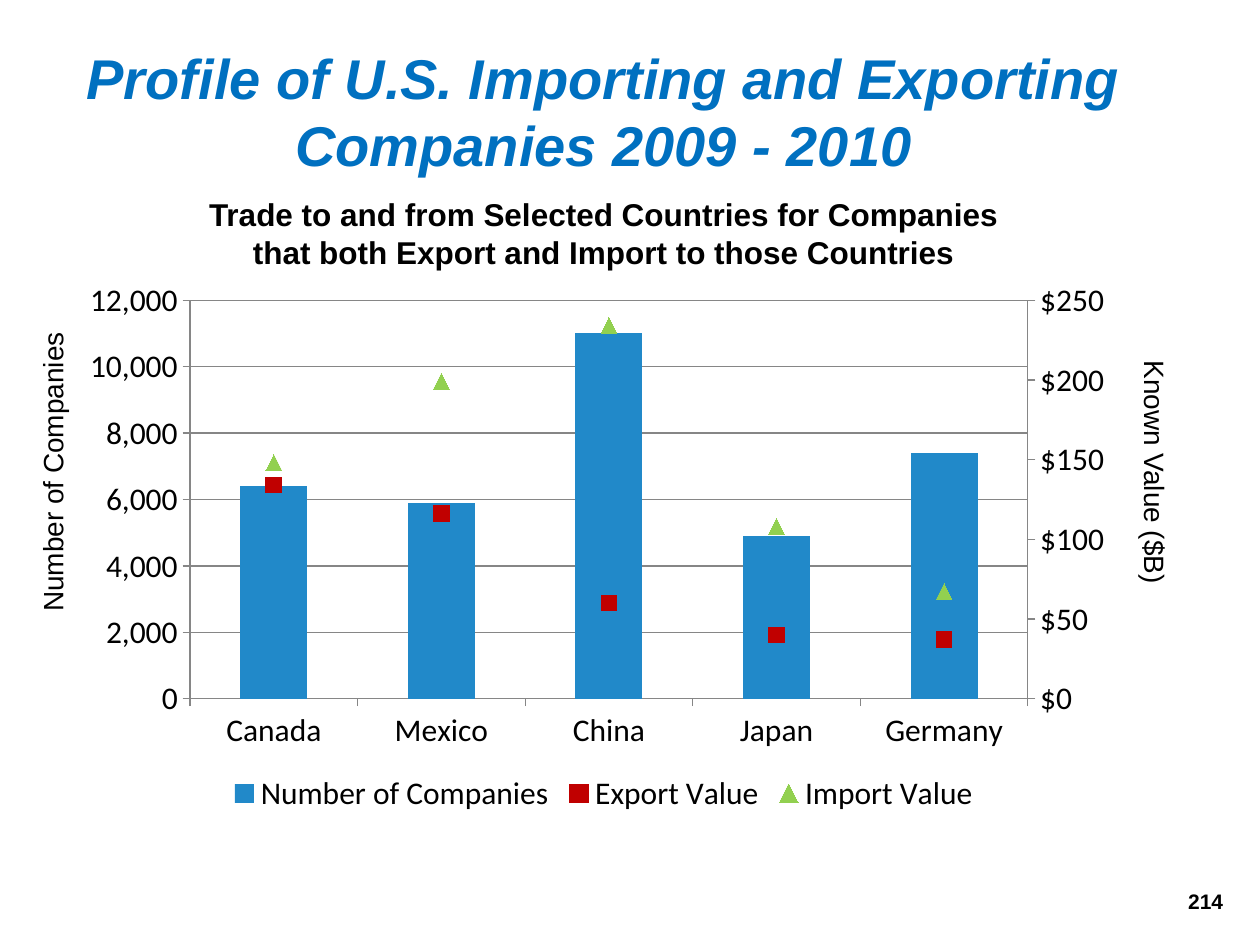
from dataclasses import dataclass

from lxml.etree import SubElement
from pptx import Presentation
from pptx.chart.chart import Chart
from pptx.chart.data import CategoryChartData
from pptx.dml.color import RGBColor
from pptx.enum.chart import XL_CHART_TYPE, XL_LEGEND_POSITION, XL_MARKER_STYLE, XL_TICK_MARK
from pptx.enum.text import MSO_ANCHOR, PP_ALIGN
from pptx.oxml import parse_xml
from pptx.oxml.ns import nsdecls, qn
from pptx.slide import Slide
from pptx.text.text import TextFrame
from pptx.util import Pt


@dataclass(frozen=True)
class Theme:
    text_font: str = "Arial"
    chart_font: str = "Calibri"
    black: str = "000000"
    title_blue: str = "0070C0"
    bar_blue: str = "2189C9"
    export_red: str = "C00000"
    import_green: str = "92D050"
    grid_gray: str = "868686"
    title_size: int = 32
    body_size: int = 18
    axis_title_size: int = 16
    number_size: int = 12


THEME = Theme()


@dataclass(frozen=True)
class Label:
    text: str
    left: float
    top: float
    width: float
    height: float
    size: int
    color: str = THEME.black
    bold: bool = False
    italic: bool = False
    align: PP_ALIGN = PP_ALIGN.CENTER
    anchor: MSO_ANCHOR = MSO_ANCHOR.TOP
    rotation: float = 0


@dataclass(frozen=True)
class ValueSeries:
    name: str
    values: tuple[int, ...]
    marker: XL_MARKER_STYLE
    color: str


TITLE = Label("Profile of U.S. Importing and Exporting Companies 2009 - 2010",
              42, 18, 606, 90, THEME.title_size, THEME.title_blue, True, True,
              anchor=MSO_ANCHOR.MIDDLE)
LABELS = (
    Label("214", 538, 500.5, 168, 28.5, THEME.number_size, bold=True,
          align=PP_ALIGN.RIGHT, anchor=MSO_ANCHOR.MIDDLE),
    Label("Trade to and from Selected Countries for Companies that both Export "
          "and Import to those Countries", 108, 108, 474, 51, THEME.body_size, bold=True),
    Label("Known Value ($B)", 558, 256.5, 204, 26.6, THEME.axis_title_size, rotation=90),
    Label("Number of Companies", -72, 256.5, 204, 26.6, THEME.axis_title_size, rotation=270),
)
COUNTRIES = ("Canada", "Mexico", "China", "Japan", "Germany")
COMPANIES = (6400, 5900, 11000, 4900, 7400)
TRADE_VALUES = (
    ValueSeries("Export Value", (134, 116, 60, 40, 37), XL_MARKER_STYLE.SQUARE, THEME.export_red),
    ValueSeries("Import Value", (148, 199, 234, 108, 67), XL_MARKER_STYLE.TRIANGLE, THEME.import_green),
)
CATEGORY_AXIS_ID, VALUE_AXIS_ID = "50010", "50020"


def write_label(frame: TextFrame, label: Label) -> None:
    frame.word_wrap = True
    frame.vertical_anchor = label.anchor
    para = frame.paragraphs[0]
    para.alignment = label.align
    span = para.add_run()
    span.text = label.text
    span.font.name = THEME.text_font
    span.font.size = Pt(label.size)
    span.font.bold = label.bold
    span.font.italic = label.italic
    span.font.color.rgb = RGBColor.from_string(label.color)


def add_label(page: Slide, label: Label) -> None:
    box = page.shapes.add_textbox(Pt(label.left), Pt(label.top), Pt(label.width), Pt(label.height))
    box.rotation = label.rotation
    write_label(box.text_frame, label)


def set_plot_area(chart: Chart, left: float, top: float, width: float, height: float) -> None:
    """Fix the inner plot area, as fractions of the chart."""
    plot_area = chart._chartSpace.chart.plotArea
    for old in plot_area.findall(qn("c:layout")):
        plot_area.remove(old)
    layout = parse_xml(f"<c:layout {nsdecls('c')}/>")
    manual = SubElement(layout, qn("c:manualLayout"))
    settings = {"layoutTarget": "inner", "xMode": "edge", "yMode": "edge",
                "x": left, "y": top, "w": width, "h": height}
    for tag, value in settings.items():
        SubElement(manual, qn(f"c:{tag}")).set("val", str(value))
    plot_area.insert(0, layout)


def move_values_to_right_axis(chart: Chart) -> None:
    """Turn every series after the first into a line plot on a second axis pair."""
    bars = chart.plots[0]
    lines = parse_xml(
        f'<c:lineChart {nsdecls("c")}><c:grouping val="standard"/><c:varyColors val="0"/>'
        f'<c:marker val="1"/><c:axId val="{CATEGORY_AXIS_ID}"/><c:axId val="{VALUE_AXIS_ID}"/>'
        '</c:lineChart>')
    marker_flag = lines.find(qn("c:marker"))
    for series in list(bars.series)[1:]:
        element = series._element
        for flag in element.findall(qn("c:invertIfNegative")):
            element.remove(flag)
        marker_flag.addprevious(element)
    bars._element.addnext(lines)

    hidden_categories = parse_xml(
        f'<c:catAx {nsdecls("c")}><c:axId val="{CATEGORY_AXIS_ID}"/>'
        '<c:scaling><c:orientation val="minMax"/></c:scaling><c:delete val="1"/>'
        f'<c:axPos val="b"/><c:crossAx val="{VALUE_AXIS_ID}"/><c:crosses val="autoZero"/></c:catAx>')
    right_values = parse_xml(
        f'<c:valAx {nsdecls("c", "a")}><c:axId val="{VALUE_AXIS_ID}"/>'
        '<c:scaling><c:orientation val="minMax"/><c:max val="250"/><c:min val="0"/></c:scaling>'
        '<c:delete val="0"/><c:axPos val="r"/>'
        '<c:numFmt formatCode="&quot;$&quot;#,##0" sourceLinked="0"/>'
        '<c:majorTickMark val="out"/><c:minorTickMark val="none"/><c:tickLblPos val="nextTo"/>'
        f'<c:spPr><a:ln w="9525"><a:solidFill><a:srgbClr val="{THEME.grid_gray}"/></a:solidFill></a:ln></c:spPr>'
        f'<c:crossAx val="{CATEGORY_AXIS_ID}"/><c:crosses val="max"/>'
        '<c:crossBetween val="between"/><c:majorUnit val="50"/></c:valAx>')
    chart.value_axis._element.addnext(right_values)
    right_values.addnext(hidden_categories)


def add_trade_chart(page: Slide) -> None:
    data = CategoryChartData()
    data.categories = COUNTRIES
    data.add_series("Number of Companies", COMPANIES)
    for trade in TRADE_VALUES:
        data.add_series(trade.name, trade.values)
    chart = page.shapes.add_chart(XL_CHART_TYPE.COLUMN_CLUSTERED, Pt(42), Pt(156),
                                  Pt(606), Pt(312), data).chart
    chart.has_title = False
    chart.font.name = THEME.chart_font
    chart.font.size = Pt(THEME.body_size)
    chart.font.color.rgb = RGBColor.from_string(THEME.black)
    chart.has_legend = True
    chart.legend.position = XL_LEGEND_POSITION.BOTTOM
    chart.legend.include_in_layout = False

    # Left and bottom axes
    values = chart.value_axis
    values.minimum_scale, values.maximum_scale, values.major_unit = 0, 12000, 2000
    values.tick_labels.number_format = "#,##0"
    values.tick_labels.number_format_is_linked = False
    values.has_major_gridlines = True
    for axis in (values, chart.category_axis):
        axis.major_tick_mark = XL_TICK_MARK.OUTSIDE
    for holder in (values, chart.category_axis, values.major_gridlines):
        holder.format.line.width = Pt(0.75)
        holder.format.line.color.rgb = RGBColor.from_string(THEME.grid_gray)

    # Columns
    move_values_to_right_axis(chart)
    set_plot_area(chart, 0.11, 0.05, 0.79, 0.73)
    bars, lines = chart.plots
    bars.gap_width = 150
    bars.vary_by_categories = False
    fill = bars.series[0].format.fill
    fill.solid()
    fill.fore_color.rgb = RGBColor.from_string(THEME.bar_blue)

    # Markers without joining lines
    for series, trade in zip(lines.series, TRADE_VALUES):
        series.smooth = False
        series.format.line.fill.background()
        series.marker.style = trade.marker
        series.marker.size = 9
        series.marker.format.fill.solid()
        series.marker.format.fill.fore_color.rgb = RGBColor.from_string(trade.color)
        series.marker.format.line.fill.background()


def main() -> None:
    deck = Presentation()
    deck.slide_width, deck.slide_height = Pt(720), Pt(540)
    page = deck.slides.add_slide(deck.slide_layouts[5])

    title = page.shapes.title
    title.left, title.top = Pt(TITLE.left), Pt(TITLE.top)
    title.width, title.height = Pt(TITLE.width), Pt(TITLE.height)
    write_label(title.text_frame, TITLE)

    add_trade_chart(page)
    for label in LABELS:
        add_label(page, label)
    deck.save("out.pptx")


if __name__ == "__main__":
    main()
